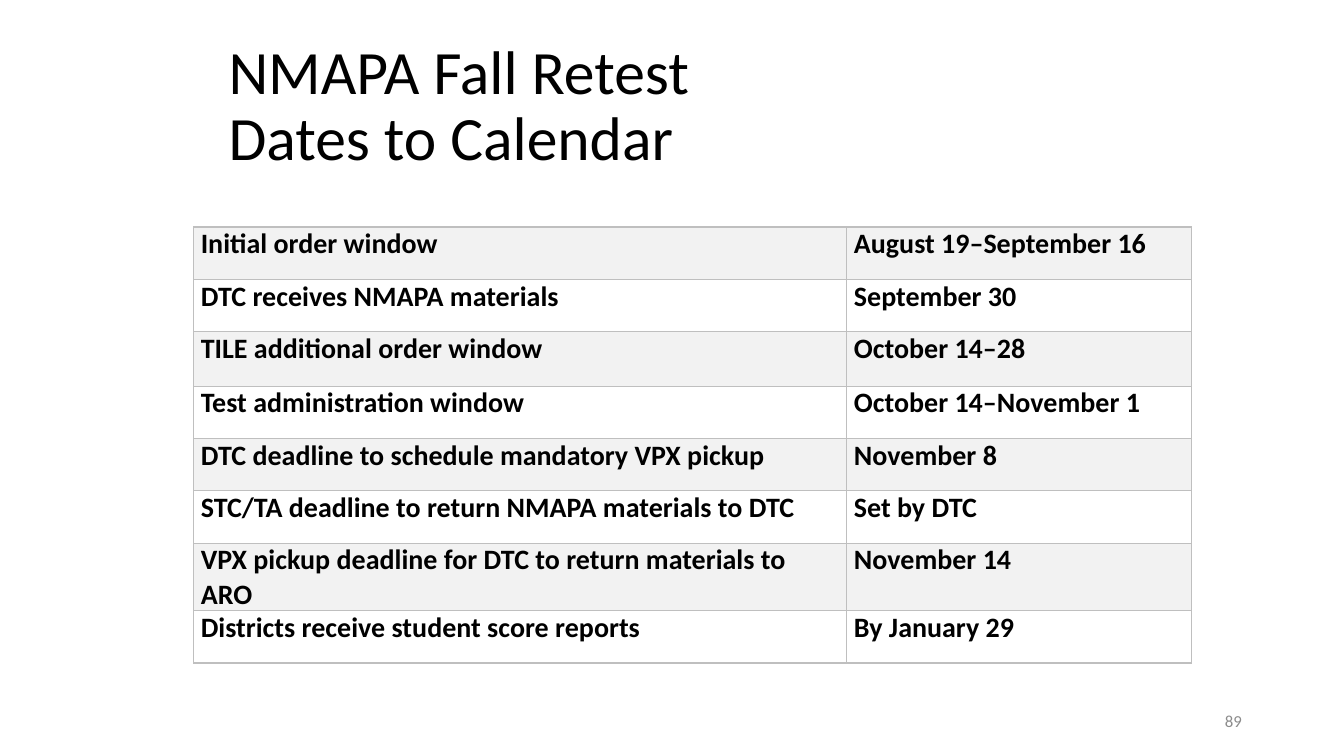
from dataclasses import dataclass
from typing import NamedTuple

from lxml.etree import SubElement
from pptx import Presentation
from pptx.dml.color import RGBColor
from pptx.enum.text import MSO_ANCHOR, PP_ALIGN
from pptx.oxml.ns import qn
from pptx.slide import Slide
from pptx.table import _Cell as Cell
from pptx.text.text import _Paragraph as Para
from pptx.util import Cm, Pt


@dataclass(frozen=True)
class Theme:
    font: str = "Calibri"
    ink: str = "000000"
    muted: str = "8C8C8C"
    band: str = "F2F2F2"
    plain: str = "FFFFFF"
    rule: str = "BFBFBF"
    title: int = 44
    body: int = 20
    small: int = 12


class Label(NamedTuple):
    text: str
    box: tuple[float, float, float, float]
    size: int
    color: str
    align: PP_ALIGN
    spacing: float


class Event(NamedTuple):
    task: str
    date: str


THEME = Theme()

LABELS = [
    Label("NMAPA Fall Retest\vDates to Calendar", (5.51, 0.76, 22.86, 3.89),
          THEME.title, THEME.ink, PP_ALIGN.LEFT, 0.9),
    Label("89", (23.93, 17.65, 7.62, 1.02),
          THEME.small, THEME.muted, PP_ALIGN.RIGHT, 1.0),
]

EVENTS = [
    Event("Initial order window", "August 19–September 16"),
    Event("DTC receives NMAPA materials", "September 30"),
    Event("TILE additional order window", "October 14–28"),
    Event("Test administration window", "October 14–November 1"),
    Event("DTC deadline to schedule mandatory VPX pickup", "November 8"),
    Event("STC/TA deadline to return NMAPA materials to DTC", "Set by DTC"),
    Event("VPX pickup deadline for DTC to return materials to ARO", "November 14"),
    Event("Districts receive student score reports", "By January 29"),
]
WIDTHS = (16.46, 8.69)
ROW, TALL = 1.32, 1.37


def style(para: Para, size: int, color: str, bold: bool = False) -> None:
    font = para.font
    font.name, font.size, font.bold = THEME.font, Pt(size), bold
    font.color.rgb = RGBColor.from_string(color)


def add_label(slide: Slide, label: Label) -> None:
    frame = slide.shapes.add_textbox(*map(Cm, label.box)).text_frame
    frame.word_wrap = True
    frame.vertical_anchor = MSO_ANCHOR.MIDDLE
    para = frame.paragraphs[0]
    para.text = label.text
    para.alignment = label.align
    para.line_spacing = label.spacing
    style(para, label.size, label.color)


def add_rules(cell: Cell) -> None:
    """Draw thin lines on all four sides; call before setting the fill."""
    props = cell._tc.get_or_add_tcPr()
    for side in ("a:lnL", "a:lnR", "a:lnT", "a:lnB"):
        line = SubElement(props, qn(side), w=str(Pt(1)))
        fill = SubElement(line, qn("a:solidFill"))
        SubElement(fill, qn("a:srgbClr"), val=THEME.rule)


def fill_cell(cell: Cell, text: str, shade: str) -> None:
    add_rules(cell)
    cell.fill.solid()
    cell.fill.fore_color.rgb = RGBColor.from_string(shade)
    cell.margin_left = cell.margin_right = Cm(0.18)
    cell.margin_top = cell.margin_bottom = 0
    para = cell.text_frame.paragraphs[0]
    para.text = text
    para.space_before = Pt(6)
    style(para, THEME.body, THEME.ink, bold=True)


def add_dates(slide: Slide) -> None:
    table = slide.shapes.add_table(
        len(EVENTS), len(WIDTHS), Cm(4.88), Cm(5.72),
        Cm(sum(WIDTHS)), Cm(ROW * len(EVENTS))).table
    table.first_row = table.horz_banding = False
    for col, width in zip(table.columns, WIDTHS):
        col.width = Cm(width)
    for index, (row, event) in enumerate(zip(table.rows, EVENTS)):
        row.height = Cm(TALL if index % 4 == 2 else ROW)
        shade = THEME.plain if index % 2 else THEME.band
        for cell, text in zip(row.cells, event):
            fill_cell(cell, text, shade)


def main() -> None:
    deck = Presentation()
    deck.slide_width, deck.slide_height = Cm(33.87), Cm(19.05)
    slide = deck.slides.add_slide(deck.slide_layouts[6])
    for label in LABELS:
        add_label(slide, label)
    add_dates(slide)
    deck.save("out.pptx")


if __name__ == "__main__":
    main()
